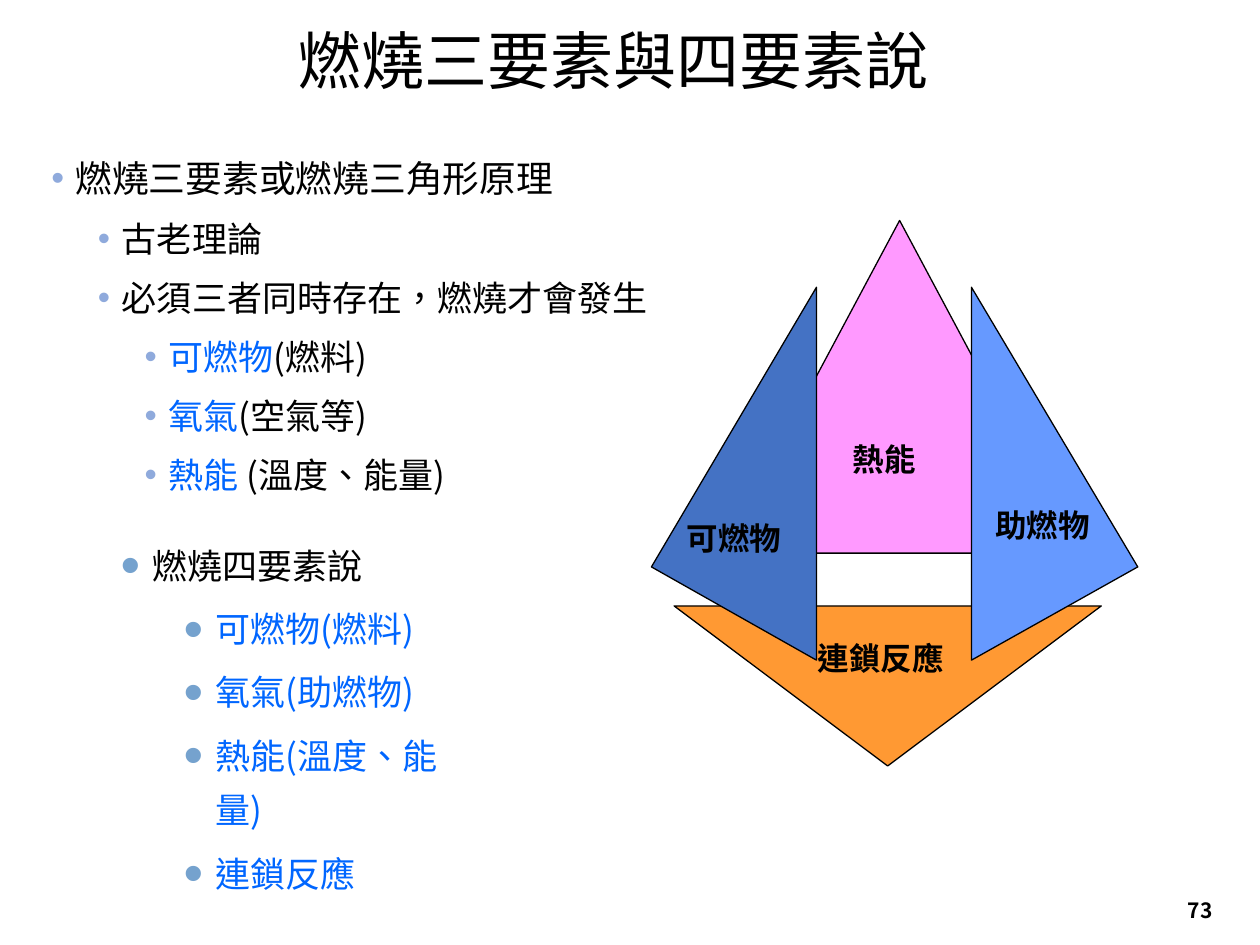
from typing import NamedTuple

from lxml.etree import SubElement
from pptx import Presentation
from pptx.dml.color import RGBColor
from pptx.enum.lang import MSO_LANGUAGE_ID
from pptx.enum.shapes import MSO_SHAPE
from pptx.enum.text import MSO_ANCHOR, PP_ALIGN
from pptx.oxml.ns import qn
from pptx.util import Emu, Pt

SCALE = 9144
FONT = "Noto Sans CJK SC"
BLACK = RGBColor(0x00, 0x00, 0x00)
BLUE = RGBColor(0x00, 0x66, 0xFF)
PINK = RGBColor(0xFF, 0x99, 0xFF)
ORANGE = RGBColor(0xFF, 0x99, 0x33)
NAVY = RGBColor(0x44, 0x72, 0xC4)
SKY = RGBColor(0x66, 0x99, 0xFF)
PALE = RGBColor(0x8F, 0xAA, 0xDC)
STEEL = RGBColor(0x75, 0xA2, 0xCE)


class Box(NamedTuple):
    x: int
    y: int
    w: int
    h: int


class Item(NamedTuple):
    level: int
    runs: list
    size: int = 20


class Style(NamedTuple):
    color: RGBColor
    percent: int
    spacing: float
    before: float
    first: int
    step: int
    hang: int


class Label(NamedTuple):
    text: str
    box: Box
    size: int = 18
    bold: bool = True
    align: PP_ALIGN = PP_ALIGN.LEFT
    anchor: MSO_ANCHOR = MSO_ANCHOR.TOP
    wrap: bool = False


class Side(NamedTuple):
    color: RGBColor
    inner: int
    outer: int


PLAIN = Style(PALE, 100, 1.25, 3.8, 19, 37, 19)
LARGE = Style(STEEL, 160, 1.3, 5, 25, 50, 25)

THREE = [
    Item(0, [("燃燒三要素或燃燒三角形原理", BLACK)], 21),
    Item(1, [("古老理論", BLACK)]),
    Item(1, [("必須三者同時存在，燃燒才會發生", BLACK)]),
    Item(2, [("可燃物", BLUE), ("(燃料)", BLACK)]),
    Item(2, [("氧氣", BLUE), ("(空氣等)", BLACK)]),
    Item(2, [("熱能 ", BLUE), ("(溫度、能量)", BLACK)]),
]
FOUR = [
    Item(0, [("燃燒四要素說", BLACK)]),
    Item(1, [("可燃物(燃料)", BLUE)]),
    Item(1, [("氧氣(助燃物)", BLUE)]),
    Item(1, [("熱能(溫度、能量)", BLUE)]),
    Item(1, [("連鎖反應", BLUE)]),
]
SIDES = [Side(NAVY, 648, 517), Side(SKY, 771, 903)]
LABELS = [
    Label("可燃物", Box(535, 407, 95, 40)),
    Label("熱能", Box(667, 344, 70, 40)),
    Label("助燃物", Box(780, 397, 95, 40)),
    Label("連鎖反應", Box(639, 502, 120, 40)),
    Label("燃燒三要素與四要素說", Box(222, 12, 529, 76), 36, False, PP_ALIGN.CENTER),
    Label("73", Box(918, 702, 69, 40), 12, True, PP_ALIGN.CENTER,
          MSO_ANCHOR.MIDDLE, True),
]


def px(n: int) -> Emu:
    return Emu(n * SCALE)


def frame(slide, box: Box, wrap: bool):
    text = slide.shapes.add_textbox(*map(px, box)).text_frame
    text.word_wrap = wrap
    return text


def style(font, size: int, color: RGBColor, bold: bool = False) -> None:
    font.name = FONT
    font.size = Pt(size)
    font.bold = bold
    font.color.rgb = color
    font.language_id = MSO_LANGUAGE_ID.TRADITIONAL_CHINESE


def bullet(para, look: Style, level: int) -> None:
    props = para._p.get_or_add_pPr()
    props.set("marL", str(px(look.first + level * look.step)))
    props.set("indent", str(px(-look.hang)))
    tint = SubElement(props, qn("a:buClr"))
    SubElement(tint, qn("a:srgbClr"), val=str(look.color))
    SubElement(props, qn("a:buSzPct"), val=str(look.percent * 1000))
    SubElement(props, qn("a:buFont"), typeface="Arial")
    SubElement(props, qn("a:buChar"), char="•")


def add_list(slide, box: Box, items: list[Item], look: Style) -> None:
    text = frame(slide, box, True)
    for i, item in enumerate(items):
        para = text.add_paragraph() if i else text.paragraphs[0]
        para.level = item.level
        para.line_spacing = look.spacing
        para.space_before = Pt(look.before if i else 0)
        bullet(para, look, item.level)
        style(para.font, item.size, item.runs[0][1])
        for words, color in item.runs:
            run = para.add_run()
            run.text = words
            if color != item.runs[0][1]:
                run.font.color.rgb = color


def add_label(slide, label: Label) -> None:
    text = frame(slide, label.box, label.wrap)
    text.vertical_anchor = label.anchor
    para = text.paragraphs[0]
    para.text = label.text
    para.alignment = label.align
    style(para.font, label.size, BLACK, label.bold)


def paint(shape, color: RGBColor) -> None:
    shape.shadow.inherit = False
    shape.fill.solid()
    shape.fill.fore_color.rgb = color
    shape.line.color.rgb = BLACK
    shape.line.width = Pt(0.75)


def add_peak(slide, box: Box, color: RGBColor, flip: bool = False) -> None:
    shape = slide.shapes.add_shape(MSO_SHAPE.ISOSCELES_TRIANGLE, *map(px, box))
    if flip:
        shape._element.spPr.xfrm.set("flipV", "1")
    paint(shape, color)


def add_side(slide, side: Side) -> None:
    path = slide.shapes.build_freeform(side.inner, 228, SCALE)
    path.add_line_segments([(side.outer, 450), (side.inner, 524)], close=True)
    paint(path.convert_to_shape(), side.color)


def main() -> None:
    deck = Presentation()
    deck.slide_width, deck.slide_height = px(1000), px(750)
    slide = deck.slides.add_slide(deck.slide_layouts[6])
    add_list(slide, Box(31, 110, 526, 317), THREE, PLAIN)
    add_peak(slide, Box(573, 175, 282, 264), PINK)
    add_peak(slide, Box(535, 481, 339, 127), ORANGE, True)
    for side in SIDES:
        add_side(slide, side)
    for label in LABELS:
        add_label(slide, label)
    add_list(slide, Box(86, 417, 308, 257), FOUR, LARGE)
    deck.save("out.pptx")


if __name__ == "__main__":
    main()
